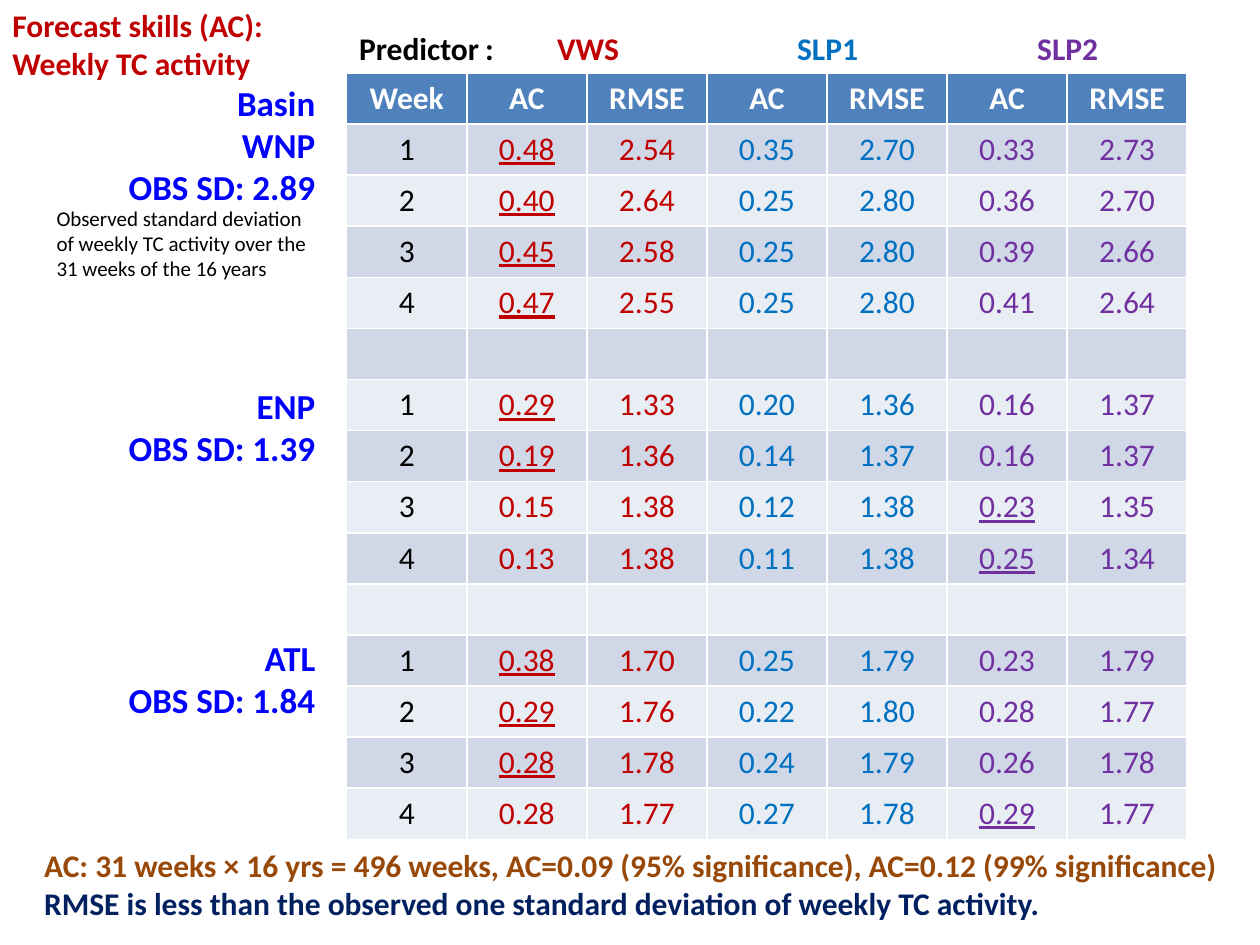
from lxml import etree
from pptx import Presentation
from pptx import util as u
from pptx.dml.color import RGBColor
from pptx.enum import text
from pptx.oxml import ns

# Content
TITLE = ["Forecast skills (AC):", "Weekly TC activity"]
PREDICTORS = ["VWS", "SLP1", "SLP2"]
HEADER = ["Week"] + ["AC", "RMSE"] * len(PREDICTORS)
BASINS = [
    ("WNP", "2.89", [
        "0.48 2.54 0.35 2.70 0.33 2.73",
        "0.40 2.64 0.25 2.80 0.36 2.70",
        "0.45 2.58 0.25 2.80 0.39 2.66",
        "0.47 2.55 0.25 2.80 0.41 2.64"]),
    ("ENP", "1.39", [
        "0.29 1.33 0.20 1.36 0.16 1.37",
        "0.19 1.36 0.14 1.37 0.16 1.37",
        "0.15 1.38 0.12 1.38 0.23 1.35",
        "0.13 1.38 0.11 1.38 0.25 1.34"]),
    ("ATL", "1.84", [
        "0.38 1.70 0.25 1.79 0.23 1.79",
        "0.29 1.76 0.22 1.80 0.28 1.77",
        "0.28 1.78 0.24 1.79 0.26 1.78",
        "0.28 1.77 0.27 1.78 0.29 1.77"]),
]
SD_NOTE = ("Observed standard deviation of weekly TC activity "
           "over the 31 weeks of the 16 years")
FOOTER = [
    "AC: 31 weeks × 16 yrs = 496 weeks, AC=0.09 (95% significance), "
    "AC=0.12 (99% significance)",
    "RMSE is less than the observed one standard deviation of weekly TC activity.",
]

THEME = {
    "font": "Calibri", "body": 18, "basin size": 20, "note size": 12,
    "black": "000000", "white": "FFFFFF", "title": "C00000",
    "basin": "0000FF", "brown": "984807", "navy": "002060",
    "predictors": ["C00000", "0070C0", "7030A0"],
    "header fill": "4F81BD", "bands": ["D0D8E8", "E9EDF4"],
}
COLUMN, ROW = 2.42, 1.03          # table grid, cm
TABLE_LEFT, TABLE_TOP = 6.99, 1.47
BASIN_GAPS = [0, 101, 96]         # points above each basin name


def style(font, color, size=THEME["body"], bold=True):
    font.name, font.size, font.bold = THEME["font"], u.Pt(size), bold
    font.color.rgb = RGBColor.from_string(color)


def add_box(page, left, top, width, height, lines, colors,
            size=THEME["body"], bold=True, wrap=False, align=None):
    box = page.shapes.add_textbox(*map(u.Cm, (left, top, width, height)))
    frame = box.text_frame
    frame.word_wrap = wrap
    frame.auto_size = text.MSO_AUTO_SIZE.SHAPE_TO_FIT_TEXT
    frame.text = "\n".join(lines)
    for para, color in zip(frame.paragraphs, colors):
        para.alignment = align
        for span in para.runs:
            style(span.font, color, size, bold)
    return frame


def add_tabs(para, stops):
    tabs = etree.SubElement(para._p.get_or_add_pPr(), ns.qn("a:tabLst"))
    for stop in stops:
        etree.SubElement(tabs, ns.qn("a:tab"), pos=str(u.Cm(stop)), algn="l")


def fill_cell(cell, value, fill, color, bold=False, underline=False):
    cell.fill.solid()
    cell.fill.fore_color.rgb = RGBColor.from_string(fill)
    para = cell.text_frame.paragraphs[0]
    para.text = value
    para.alignment = text.PP_ALIGN.CENTER
    for span in para.runs:
        style(span.font, color, bold=bold)
        if underline:
            span.font.underline = True


def add_skill_table(page):
    rows = [[""] * len(HEADER)]
    for _, _, weeks in BASINS:
        rows += [[str(week), *line.split()] for week, line in enumerate(weeks, 1)]
        rows.append([""] * len(HEADER))
    rows = rows[1:-1]             # blank rows only between basins

    count = len(rows) + 1
    table = page.shapes.add_table(
        count, len(HEADER), u.Cm(TABLE_LEFT), u.Cm(TABLE_TOP),
        u.Cm(COLUMN * len(HEADER)), u.Cm(ROW * count)).table
    for column in table.columns:
        column.width = u.Cm(COLUMN)
    for row in table.rows:
        row.height = u.Cm(ROW)

    for c, name in enumerate(HEADER):
        fill_cell(table.cell(0, c), name, THEME["header fill"], THEME["white"], True)
    colors = [THEME["black"]] + [c for c in THEME["predictors"] for _ in range(2)]
    for r, values in enumerate(rows):
        best = max(values[1::2])  # highest AC of the week is underlined
        for c, value in enumerate(values):
            fill_cell(table.cell(r + 1, c), value, THEME["bands"][r % 2], colors[c],
                      underline=c % 2 == 1 and value == best)


def add_predictor_line(page):
    frame = add_box(page, TABLE_LEFT, 0.46, 15.67, 1.02, [""], [])
    para = frame.paragraphs[0]
    add_tabs(para, [2.54] + [3.99 + 2 * COLUMN * i for i in range(len(PREDICTORS))])
    labels = ["Predictor\t:"] + ["\t" + name for name in PREDICTORS]
    for label, color in zip(labels, [THEME["black"]] + THEME["predictors"]):
        span = para.add_run()
        span.text = label
        style(span.font, color)


def add_basin_labels(page):
    lines = ["Basin"]
    for name, deviation, _ in BASINS:
        lines += [name, f"OBS SD: {deviation}"]
    frame = add_box(page, 2.29, 1.52, 4.32, 14.78, lines,
                    [THEME["basin"]] * len(lines), THEME["basin size"],
                    align=text.PP_ALIGN.RIGHT)
    for para, gap in zip(frame.paragraphs[1::2], BASIN_GAPS):
        if gap:
            para.space_before = u.Pt(gap)


def main():
    deck = Presentation()
    deck.slide_width, deck.slide_height = u.Cm(25.4), u.Cm(19.05)
    page = deck.slides.add_slide(deck.slide_layouts[6])

    # Results and their labels
    add_skill_table(page)
    add_predictor_line(page)
    add_basin_labels(page)

    # Footer, title and note
    add_box(page, 0.64, 16.94, 24.54, 1.8, FOOTER, [THEME["brown"], THEME["navy"]])
    add_box(page, 0, 0, 5.61, 1.8, TITLE, [THEME["title"]] * 2)
    add_box(page, 0.89, 4.01, 5.89, 1.8, [SD_NOTE], [THEME["black"]],
            THEME["note size"], bold=False, wrap=True)
    deck.save("out.pptx")


if __name__ == "__main__":
    main()
